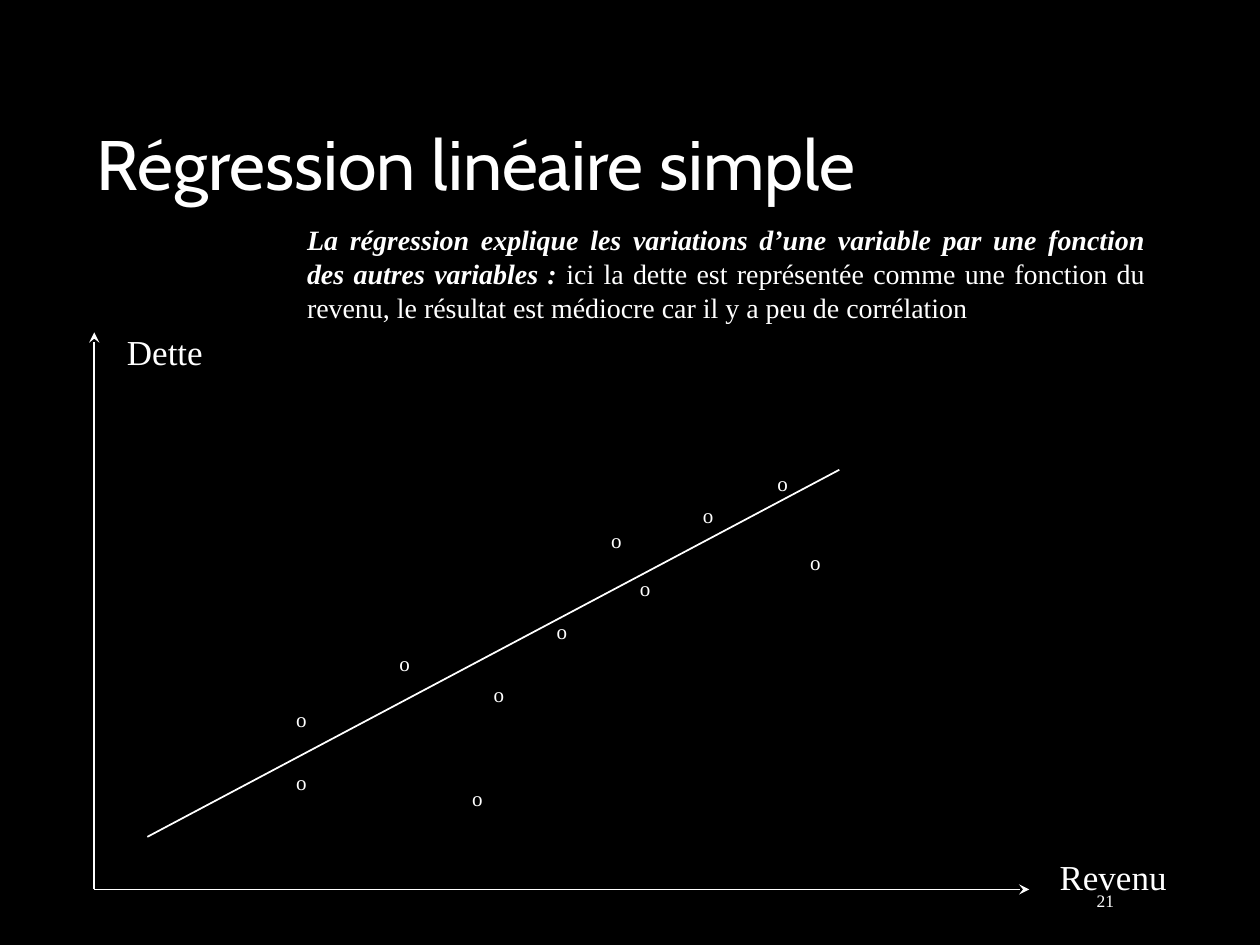
from pptx import Presentation
from pptx.dml.color import RGBColor
from pptx.enum.shapes import MSO_CONNECTOR as Link
from pptx.enum.text import MSO_ANCHOR as Anchor, MSO_AUTO_SIZE as Fit, PP_ALIGN as Align
from pptx.oxml.ns import qn
from pptx.util import Cm, Pt
from lxml.etree import SubElement

DOTS = [
    (5.72, 15.39), (5.72, 14.12), (7.8, 12.98), (9.27, 15.72),
    (9.7, 13.61), (10.97, 12.34), (12.07, 10.52), (12.65, 11.48),
    (13.92, 10.01), (15.42, 9.37), (16.08, 10.95),
]


def tint(code):
    return RGBColor.from_string(code)


def write(par, text, size=12, font="Times New Roman", ink="FFFFFF", strong=False):
    """Add a run; strong means bold italic."""
    run = par.add_run()
    run.text = text
    face = run.font
    face.size, face.name = Pt(size), font
    face.bold = face.italic = strong
    face.color.rgb = tint(ink)


class Page:
    ink = "FFFFFF"
    ground = "000000"
    head = "Cabin"

    def __init__(self, deck):
        self.slide = deck.slides.add_slide(deck.slide_layouts[5])
        fill = self.slide.background.fill
        fill.solid()
        fill.fore_color.rgb = tint(self.ground)

    def title(self, text, x, y, w, h):
        box = self.slide.shapes.title
        box.left, box.top, box.width, box.height = Cm(x), Cm(y), Cm(w), Cm(h)
        frame = box.text_frame
        frame.vertical_anchor = Anchor.BOTTOM
        frame.auto_size = Fit.NONE
        par = frame.paragraphs[0]
        par.alignment, par.line_spacing = Align.LEFT, 0.8
        write(par, text, size=40, font=self.head, ink=self.ink)

    def text(self, x, y, w, h, align=Align.LEFT, anchor=Anchor.TOP, wrap=True):
        """Add a text box and return its first paragraph."""
        frame = self.slide.shapes.add_textbox(Cm(x), Cm(y), Cm(w), Cm(h)).text_frame
        frame.word_wrap = wrap
        frame.auto_size = Fit.NONE if wrap else Fit.SHAPE_TO_FIT_TEXT
        frame.vertical_anchor = anchor
        par = frame.paragraphs[0]
        par.alignment = align
        return par

    def label(self, text, x, y, w, h, size):
        write(self.text(x, y, w, h, wrap=False), text, size=size, ink=self.ink)

    def line(self, start, end, arrow=False):
        x1, y1, x2, y2 = map(Cm, start + end)
        link = self.slide.shapes.add_connector(Link.STRAIGHT, x1, y1, x2, y2)
        link.line.width = Pt(1)
        link.line.color.rgb = tint(self.ink)
        if arrow:
            SubElement(link.line._get_or_add_ln(), qn("a:tailEnd"), type="stealth")
        SubElement(link._element.spPr, qn("a:effectLst"))


def main():
    deck = Presentation()
    deck.slide_width, deck.slide_height = Cm(25.4), Cm(19.05)
    page = Page(deck)
    page.title("Régression linéaire simple", 1.7, 1.07, 22, 3.17)

    number = page.text(20.17, 17.78, 2.54, 0.76, align=Align.RIGHT, anchor=Anchor.MIDDLE)
    write(number, "21", size=10)

    corner = (1.9, 17.93)
    page.line(corner, (1.9, 6.7), arrow=True)
    page.line(corner, (20.75, 17.93), arrow=True)
    page.label("Dette", 2.31, 6.53, 2.06, 1.11, size=20)
    page.label("Revenu", 21.11, 17.12, 2.69, 1.11, size=20)

    for x, y in DOTS:
        page.label("o", x, y, 0.71, 0.76, size=12)
    page.line((2.97, 16.87), (16.92, 9.47))

    note = page.text(5.94, 4.37, 17.4, 3, align=Align.JUSTIFY)
    write(note, "La régression explique les variations d’une variable par une fonction "
                "des autres variables :", size=16, strong=True)
    write(note, " ici la dette est représentée comme une fonction du revenu, "
                "le résultat est médiocre car il y a peu de corrélation", size=16)
    deck.save("out.pptx")


if __name__ == "__main__":
    main()
